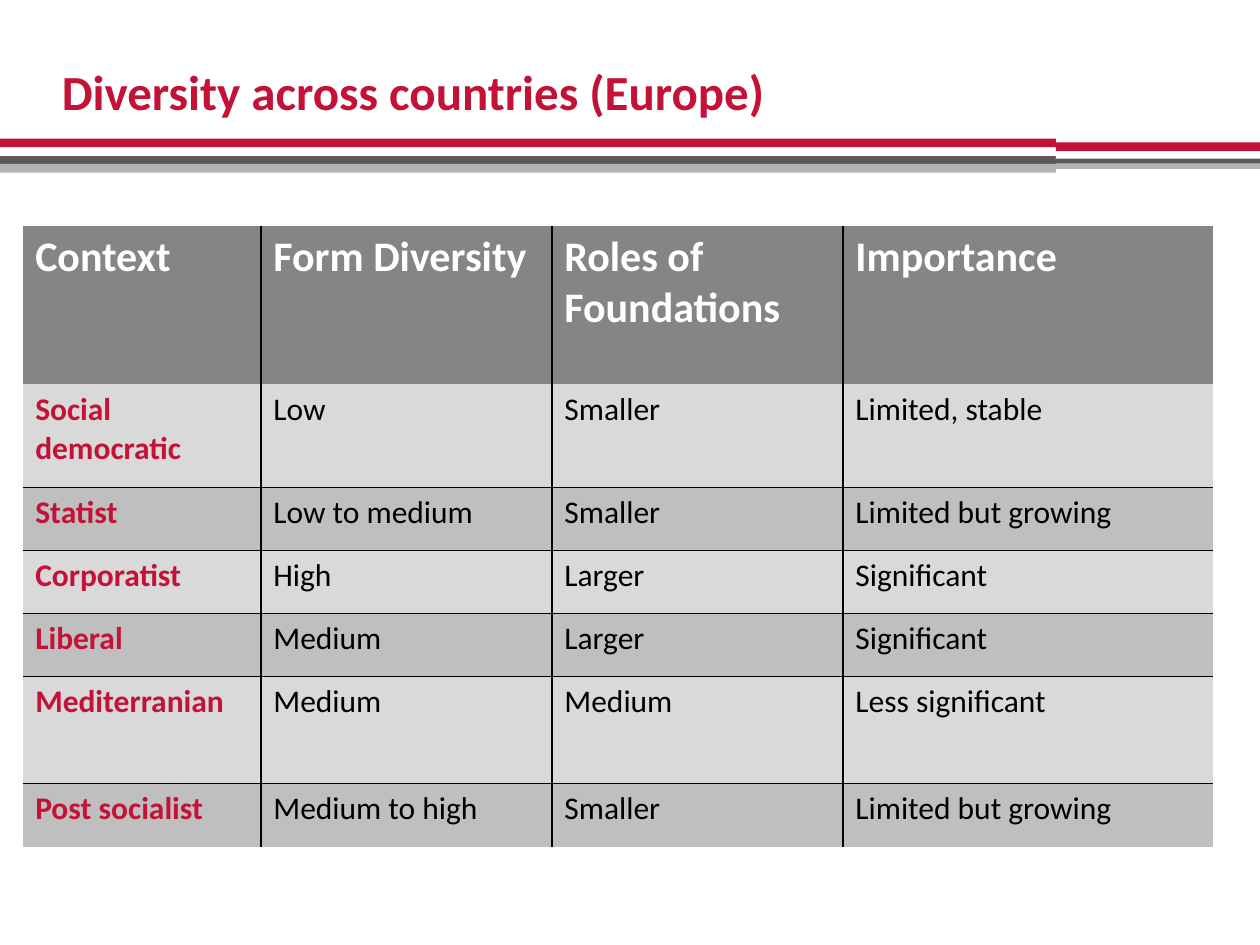
from lxml import etree
from pptx import Presentation
from pptx import util as u
from pptx.dml.color import RGBColor
from pptx.enum import shapes, text
from pptx.oxml.ns import qn

FONT = "Calibri"
COLORS = {"red": "C41237", "dark": "595959", "silver": "B2B2B2", "white": "FFFFFF",
          "black": "000000", "header": "858585", "light": "D9D9D9", "mid": "BFBFBF"}

TITLE = "Diversity across countries (Europe)"
ROWS = [
    ("Context", "Form Diversity", "Roles of Foundations", "Importance"),
    ("Social democratic", "Low", "Smaller", "Limited, stable"),
    ("Statist", "Low to medium", "Smaller", "Limited but growing"),
    ("Corporatist", "High", "Larger", "Significant"),
    ("Liberal", "Medium", "Larger", "Significant"),
    ("Mediterranian", "Medium", "Medium", "Less significant"),
    ("Post socialist", "Medium to high", "Smaller", "Limited but growing"),
]
COLUMN_WIDTHS = [1.89, 2.31, 2.31, 2.94]
ROW_HEIGHTS = [1.26, 0.82, 0.5, 0.5, 0.5, 0.85, 0.5]
TABLE_LEFT, TABLE_TOP = 0.18, 1.79

# Each band: left, width, then its stripes as (top, height, colour)
SPLIT, PAGE_WIDTH, PAGE_HEIGHT = 8.38, 10, 7.5
BANDS = [
    (0, SPLIT, [(1.1, 0.07, "red"), (1.17, 0.07, "white"),
                (1.24, 0.07, "dark"), (1.3, 0.07, "silver")]),
    (SPLIT, PAGE_WIDTH - SPLIT, [(1.13, 0.07, "red"), (1.2, 0.07, "white"),
                                 (1.26, 0.04, "dark"), (1.3, 0.04, "silver")]),
]


def rgb(name):
    return RGBColor.from_string(COLORS[name])


def add_span(frame, words, size, color, bold):
    span = frame.paragraphs[0].add_run()
    span.text = words
    span.font.name, span.font.size, span.font.bold = FONT, u.Pt(size), bold
    span.font.color.rgb = rgb(color)


def add_stripe(page, left, top, width, height, color):
    stripe = page.shapes.add_shape(shapes.MSO_SHAPE.RECTANGLE, *map(u.Inches, (left, top, width, height)))
    stripe.shadow.inherit = False
    stripe.fill.solid()
    stripe.fill.fore_color.rgb = rgb(color)
    stripe.line.fill.background()


def set_borders(cell, visible):
    """Draw the sides named in visible (L, R, T, B) and blank the others."""
    properties = cell._tc.get_or_add_tcPr()
    for position, side in enumerate("LRTB"):
        line = etree.Element(qn(f"a:ln{side}"), w=str(u.Pt(1)))
        if side in visible:
            fill = etree.SubElement(line, qn("a:solidFill"))
            etree.SubElement(fill, qn("a:srgbClr"), val=COLORS["black"])
        else:
            etree.SubElement(line, qn("a:noFill"))
        properties.insert(position, line)


def inner_sides(row, column):
    """Inside lines only, with none between the header and the body."""
    sides = {"L": column > 0, "R": column < len(COLUMN_WIDTHS) - 1,
             "T": row > 1, "B": 0 < row < len(ROWS) - 1}
    return [side for side, shown in sides.items() if shown]


def add_context_table(page):
    frame = page.shapes.add_table(
        len(ROWS), len(COLUMN_WIDTHS), u.Inches(TABLE_LEFT), u.Inches(TABLE_TOP),
        u.Inches(sum(COLUMN_WIDTHS)), u.Inches(sum(ROW_HEIGHTS)))
    table = frame.table
    table.horz_banding = False
    for column, width in zip(table.columns, COLUMN_WIDTHS):
        column.width = u.Inches(width)
    for row, height in zip(table.rows, ROW_HEIGHTS):
        row.height = u.Inches(height)
    for r, words in enumerate(ROWS):
        for c, word in enumerate(words):
            cell = table.cell(r, c)
            cell.fill.solid()
            cell.fill.fore_color.rgb = rgb("header" if r == 0 else "light" if r % 2 else "mid")
            set_borders(cell, inner_sides(r, c))
            if r == 0:
                add_span(cell.text_frame, word, 24, "white", True)
            else:
                add_span(cell.text_frame, word, 18, "black" if c else "red", c == 0)


def main():
    deck = Presentation()
    deck.slide_width, deck.slide_height = u.Inches(PAGE_WIDTH), u.Inches(PAGE_HEIGHT)
    page = deck.slides.add_slide(deck.slide_layouts[5])

    for left, width, stripes in BANDS:
        for top, height, color in stripes:
            add_stripe(page, left, top, width, height, color)

    title = page.shapes.title
    title.left, title.top, title.width, title.height = map(u.Inches, (0.39, 0.4, 7.19, 0.64))
    title.text_frame.vertical_anchor = text.MSO_ANCHOR.MIDDLE
    title.text_frame.paragraphs[0].alignment = text.PP_ALIGN.LEFT
    add_span(title.text_frame, TITLE, 28, "red", True)

    add_context_table(page)
    deck.save("out.pptx")


if __name__ == "__main__":
    main()
